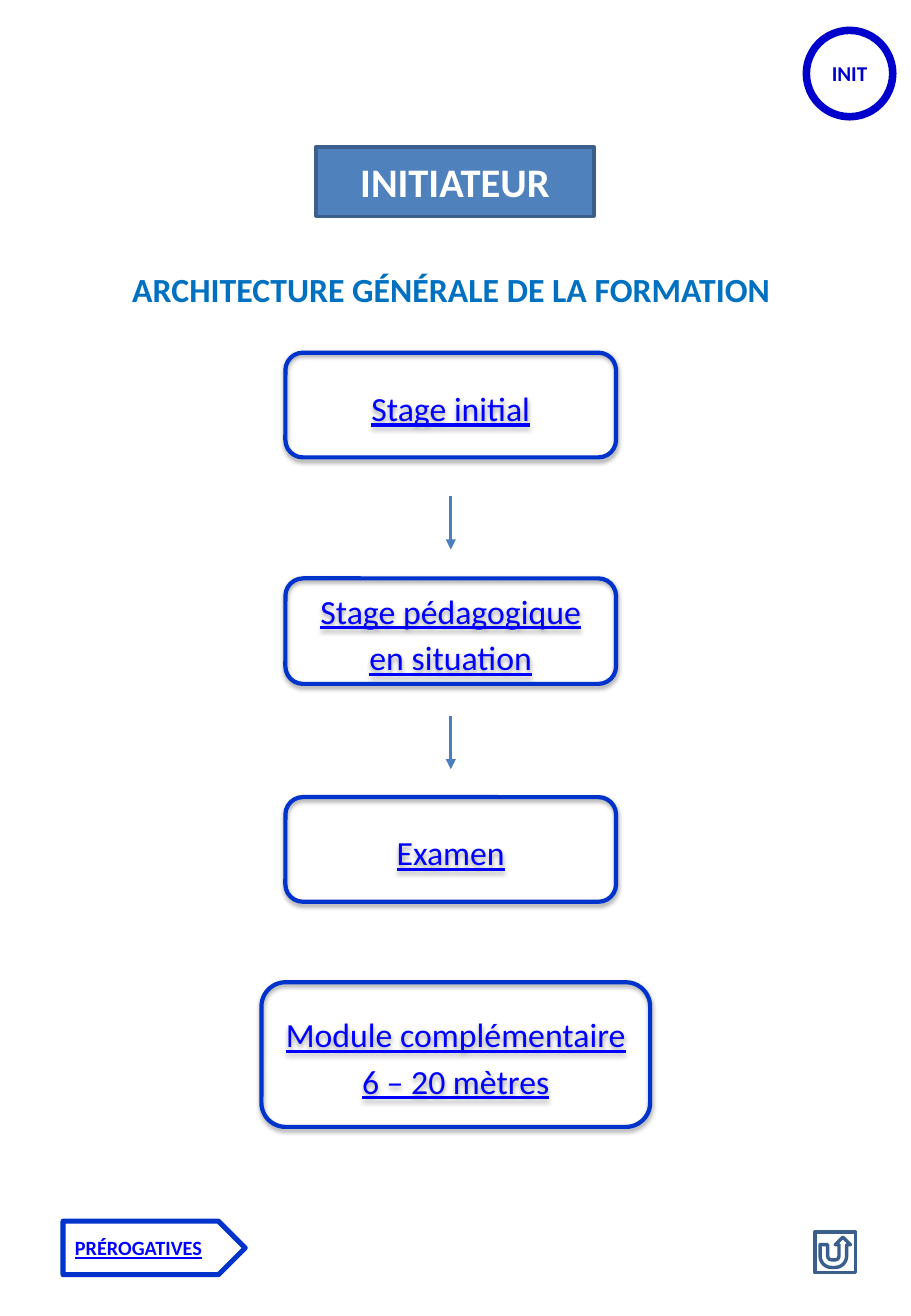
from lxml import etree
from pptx import Presentation
from pptx.dml.color import RGBColor
from pptx.enum import shapes, text
from pptx.oxml import ns, parse_xml
from pptx.util import Pt

WHITE = RGBColor(0xFF, 0xFF, 0xFF)
NAVY = RGBColor(0x00, 0x00, 0xCC)
ROYAL = RGBColor(0x00, 0x33, 0xCC)
LINK = RGBColor(0x00, 0x00, 0xFF)
HEADING = RGBColor(0x00, 0x70, 0xC0)
STEEL = RGBColor(0x4F, 0x81, 0xBD)
STEEL_DARK = RGBColor(0x3A, 0x5F, 0x8C)
ARROW = RGBColor(0x4B, 0x7E, 0xBC)

SHADOW = (
    f'<a:effectLst {ns.nsdecls("a")}>'
    '<a:outerShdw blurRad="39370" dist="20320" dir="5400000" rotWithShape="0">'
    '<a:srgbClr val="000000"><a:alpha val="38000"/></a:srgbClr>'
    '</a:outerShdw></a:effectLst>'
)

deck = Presentation()
deck.slide_width, deck.slide_height = Pt(540), Pt(779.76)
page = deck.slides.add_slide(deck.slide_layouts[6])


def add_outline(kind, left, top, width, height, line, weight, fill=None):
    shape = page.shapes.add_shape(kind, Pt(left), Pt(top), Pt(width), Pt(height))
    shape.shadow.inherit = False
    if fill is None:
        shape.fill.background()
    else:
        shape.fill.solid()
        shape.fill.fore_color.rgb = fill
    shape.line.color.rgb = line
    shape.line.width = Pt(weight)
    return shape


def write(box, words, size, color, bold=False, underline=False, wrap=True,
          align=text.PP_ALIGN.CENTER, anchor=text.MSO_ANCHOR.MIDDLE,
          spacing=None, after=None):
    frame = box.text_frame
    frame.word_wrap = wrap
    frame.vertical_anchor = anchor
    para = frame.paragraphs[0]
    para.alignment = align
    para.line_spacing = spacing
    para.space_after = after
    span = para.add_run()
    span.text = words
    span.font.name = "Calibri"
    span.font.size = Pt(size)
    span.font.bold = bold
    span.font.underline = underline
    span.font.color.rgb = color


# Level badge and return button
kinds = shapes.MSO_SHAPE
badge = add_outline(kinds.OVAL, 478, 18, 51.2, 51.2, NAVY, 4.5, WHITE)
write(badge, "INIT", 12.5, NAVY, bold=True, wrap=False)
add_outline(kinds.ACTION_BUTTON_RETURN, 483.1, 730, 24, 24, STEEL_DARK, 2)

# Title and heading
title = add_outline(kinds.RECTANGLE, 187.2, 87.2, 165, 41, STEEL_DARK, 2, STEEL)
write(title, "INITIATEUR", 24, WHITE, bold=True)
heading = page.shapes.add_textbox(Pt(60.5), Pt(155.5), Pt(414), Pt(31.5))
write(heading, "ARCHITECTURE GÉNÉRALE DE LA FORMATION", 20, HEADING, bold=True,
      anchor=text.MSO_ANCHOR.TOP)

# Training stages
stages = [
    ("Stage initial", 169.2, 209, 196, 62, Pt(10)),
    ("Stage pédagogique en situation", 169.2, 342.7, 196, 62.5, None),
    ("Examen", 169.2, 472.3, 196, 62, Pt(10)),
    ("Module complémentaire 6 – 20 mètres", 155, 582, 230.4, 85.7, None),
]
for words, left, top, width, height, after in stages:
    stage = add_outline(kinds.ROUNDED_RECTANGLE, left, top, width, height, ROYAL, 2.5)
    properties = stage.fill._xPr
    properties.remove(properties.find(ns.qn("a:effectLst")))
    properties.append(parse_xml(SHADOW))
    write(stage, words, 20, LINK, underline=True, spacing=1.15, after=after)

# Arrows between stages
for top in (293.8, 424):
    arrow = page.shapes.add_connector(
        shapes.MSO_CONNECTOR.STRAIGHT, Pt(267.2), Pt(top), Pt(267.2), Pt(top + 31.8))
    arrow.line.color.rgb = ARROW
    arrow.line.width = Pt(2)
    etree.SubElement(arrow.line._get_or_add_ln(), ns.qn("a:tailEnd"), type="triangle")
    etree.SubElement(arrow._element.spPr, ns.qn("a:effectLst"))

# Prerogatives tab
add_outline(kinds.PENTAGON, 37.4, 723.6, 108, 31.7, ROYAL, 3, WHITE)
label = page.shapes.add_textbox(Pt(37.4), Pt(728.6), Pt(90.7), Pt(21.8))
write(label, "PRÉROGATIVES", 12, LINK, bold=True, underline=True, wrap=False,
      align=text.PP_ALIGN.LEFT, anchor=text.MSO_ANCHOR.TOP)

deck.save("out.pptx")
